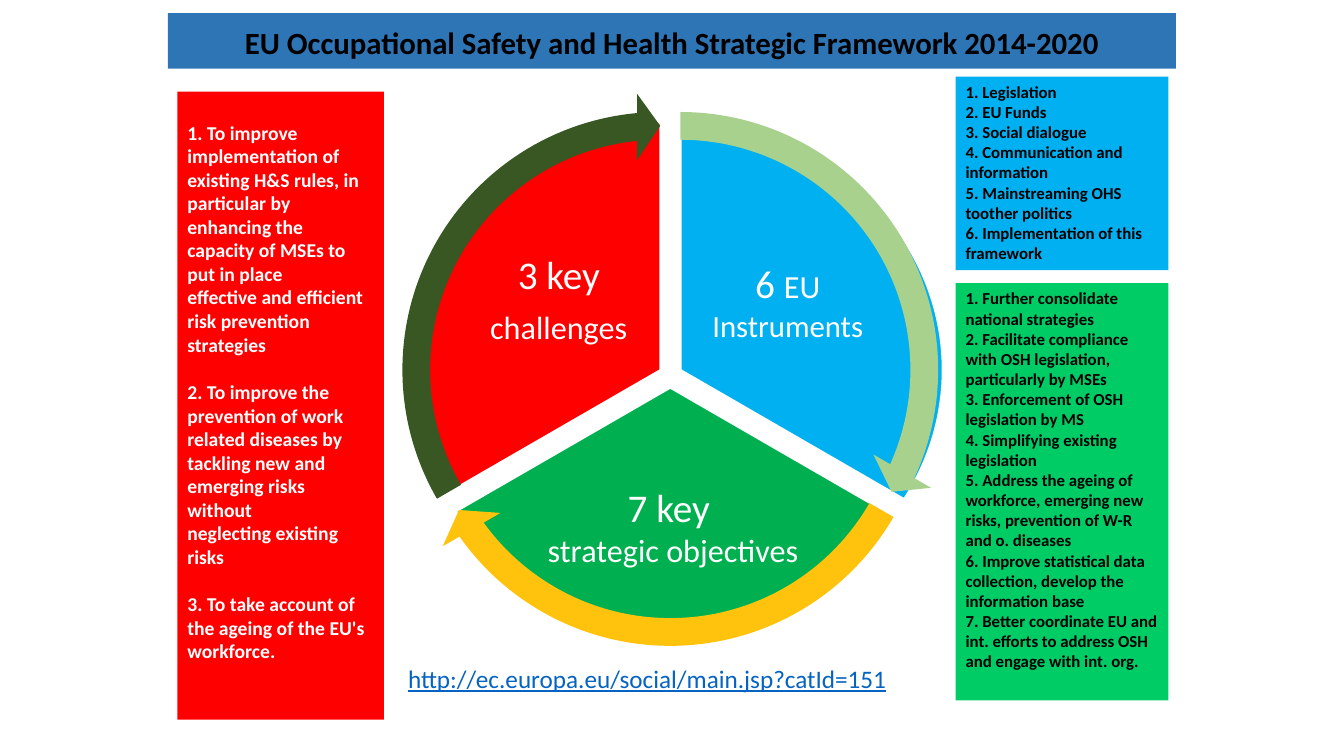
from pptx import Presentation
from pptx.dml.color import RGBColor
from pptx.enum.shapes import MSO_SHAPE
from pptx.enum.text import MSO_ANCHOR, PP_ALIGN
from pptx.util import Pt

RECTANGLE, PIE, CIRCULAR_ARROW = MSO_SHAPE.RECTANGLE, MSO_SHAPE.PIE, MSO_SHAPE.CIRCULAR_ARROW
TOP, MIDDLE = MSO_ANCHOR.TOP, MSO_ANCHOR.MIDDLE
LEFT, CENTER = PP_ALIGN.LEFT, PP_ALIGN.CENTER

BLACK = RGBColor(0x00, 0x00, 0x00)
WHITE = RGBColor(0xFF, 0xFF, 0xFF)
BANNER_BLUE = RGBColor(0x2E, 0x75, 0xB6)
SKY_BLUE = RGBColor(0x00, 0xB0, 0xF0)
RED = RGBColor(0xFF, 0x00, 0x00)
GREEN = RGBColor(0x00, 0xB0, 0x50)
BRIGHT_GREEN = RGBColor(0x00, 0xCC, 0x66)
PALE_GREEN = RGBColor(0xA9, 0xD1, 0x8E)
DARK_GREEN = RGBColor(0x38, 0x57, 0x23)
AMBER = RGBColor(0xFF, 0xC3, 0x0D)
LINK_BLUE = RGBColor(0x05, 0x63, 0xC1)

FONT = "Calibri"
PIE_SIZE = 352.8
ARROW_SIZE = 396

CHALLENGES = [
    ["1. To improve", "implementation of", "existing H&S rules, in particular by",
     "enhancing the capacity of MSEs to put in place",
     "effective and efficient risk prevention strategies"],
    ["2. To improve the", "prevention of work", "related diseases by",
     "tackling new and", "emerging risks without", "neglecting existing", "risks"],
    ["3. To take account of the ageing of the EU's workforce."],
]
INSTRUMENTS = [[
    "1. Legislation", "2. EU Funds", "3. Social dialogue",
    "4. Communication and information", "5. Mainstreaming OHS toother politics",
    "6. Implementation of this framework",
]]
OBJECTIVES = [[
    "1. Further consolidate", "national strategies",
    "2. Facilitate compliance with OSH legislation,", "particularly by MSEs",
    "3. Enforcement of OSH legislation by MS", "4. Simplifying existing", "legislation",
    "5. Address the ageing of workforce, emerging new risks, prevention of W-R and o. diseases",
    "6. Improve statistical data collection, develop the information base",
    "7. Better coordinate EU and int. efforts to address OSH and engage with int. org.",
]]


def add_filled_shape(shapes, kind, box, color, adjustments=()):
    shape = shapes.add_shape(kind, *map(Pt, box))
    shape.shadow.inherit = False
    shape.fill.solid()
    shape.fill.fore_color.rgb = color
    shape.line.fill.background()
    for index, value in enumerate(adjustments):
        shape.adjustments[index] = value
    return shape


def prepare_frame(shape, anchor, inset=None, top=None):
    frame = shape.text_frame
    frame.word_wrap = True
    frame.vertical_anchor = anchor
    if inset is not None:
        frame.margin_left = frame.margin_right = Pt(inset)
        frame.margin_top = frame.margin_bottom = Pt(inset)
    if top is not None:
        frame.margin_top = Pt(top)
    return frame


def add_paragraph(frame, first, align):
    paragraph = frame.paragraphs[0] if first else frame.add_paragraph()
    paragraph.alignment = align
    return paragraph


def add_run(paragraph, text, size, color, bold=False):
    run = paragraph.add_run()
    run.text = text
    run.font.name = FONT
    run.font.size = Pt(size)
    run.font.bold = bold
    run.font.color.rgb = color
    return run


def add_title(shapes, text):
    banner = add_filled_shape(shapes, RECTANGLE, (120, 9.4, 720, 39.6), BANNER_BLUE)
    frame = prepare_frame(banner, MIDDLE, top=9)
    paragraph = add_paragraph(frame, True, CENTER)
    paragraph.line_spacing = 0.9
    add_run(paragraph, text, 22, BLACK, bold=True)


def add_panel(shapes, box, fill, groups, size, color, top=3.6):
    """Add a coloured box whose text groups are set apart by one line."""
    panel = add_filled_shape(shapes, RECTANGLE, box, fill)
    frame = prepare_frame(panel, TOP, top=top)
    for group_index, group in enumerate(groups):
        for line_index, text in enumerate(group):
            first = group_index == line_index == 0
            paragraph = add_paragraph(frame, first, LEFT)
            if group_index and line_index == 0:
                paragraph.space_before = Pt(size * 1.22)
            add_run(paragraph, text, size, color, bold=True)


def add_sector(shapes, left, top, width, start, end, color):
    sector = add_filled_shape(shapes, PIE, (left, top, width, PIE_SIZE), color, (start, end))
    sector.line.color.rgb = WHITE
    sector.line.width = Pt(1)


def add_sector_label(shapes, box, lines, line_spacing=None, space_after=None):
    """Add white text; each line is a list of (text, size) runs."""
    frame = prepare_frame(shapes.add_textbox(*map(Pt, box)), MIDDLE, inset=2.9)
    for index, line in enumerate(lines):
        paragraph = add_paragraph(frame, index == 0, CENTER)
        if line_spacing:
            paragraph.line_spacing = line_spacing
            paragraph.space_after = Pt(space_after)
        for text, size in line:
            add_run(paragraph, text, size, WHITE)


def add_cycle_arrow(shapes, left, top, end, start, color):
    add_filled_shape(shapes, CIRCULAR_ARROW, (left, top, ARROW_SIZE, ARROW_SIZE), color,
                     (0.05, 3.28, end, start, 0.06))


def add_cycle(slide):
    shapes = slide.shapes.add_group_shape().shapes
    add_sector(shapes, 299.5, 87.8, 373.7, 162, 18, SKY_BLUE)
    add_sector_label(shapes, (496.1, 162.7, 133.2, 105.1),
                     [[("6 ", 28), ("EU ", 23), ("Instruments", 22)]])
    add_sector(shapes, 302.4, 100.8, PIE_SIZE, 18, 90, GREEN)
    add_sector_label(shapes, (386.6, 329.8, 188.6, 92.2),
                     [[("7 key ", 28)], [("strategic objectives", 23)]])
    add_sector(shapes, 295.2, 87.8, PIE_SIZE, 90, 162, RED)
    add_sector_label(shapes, (336.2, 162.7, 126, 105.1),
                     [[("3 key", 28)], [("challenges", 23)]], line_spacing=0.9, space_after=10)
    add_cycle_arrow(shapes, 288, 66.2, 14.73, 161.99, PALE_GREEN)
    add_cycle_arrow(shapes, 280.8, 79.2, 86.72, 18, AMBER)
    add_cycle_arrow(shapes, 273.6, 66.2, 158.73, 90, DARK_GREEN)


def add_web_address(shapes, text):
    frame = prepare_frame(shapes.add_textbox(Pt(284.4), Pt(470.2), Pt(391), Pt(28.8)), TOP)
    run = add_run(add_paragraph(frame, True, LEFT), text, 18, LINK_BLUE)
    run.font.underline = True


def main():
    presentation = Presentation()
    presentation.slide_width, presentation.slide_height = Pt(960), Pt(540)
    slide = presentation.slides.add_slide(presentation.slide_layouts[6])
    shapes = slide.shapes
    add_title(shapes, "EU Occupational Safety and Health Strategic Framework 2014-2020")
    add_cycle(slide)
    add_panel(shapes, (126.7, 65.5, 147.6, 448.6), RED, CHALLENGES, 14, WHITE, top=20.7)
    add_panel(shapes, (682.6, 202.3, 151.9, 298.1), BRIGHT_GREEN, OBJECTIVES, 12, BLACK)
    add_panel(shapes, (682.6, 54.7, 151.9, 138.2), SKY_BLUE, INSTRUMENTS, 12, BLACK)
    add_web_address(shapes, "http://ec.europa.eu/social/main.jsp?catId=151")
    presentation.save("out.pptx")


if __name__ == "__main__":
    main()
